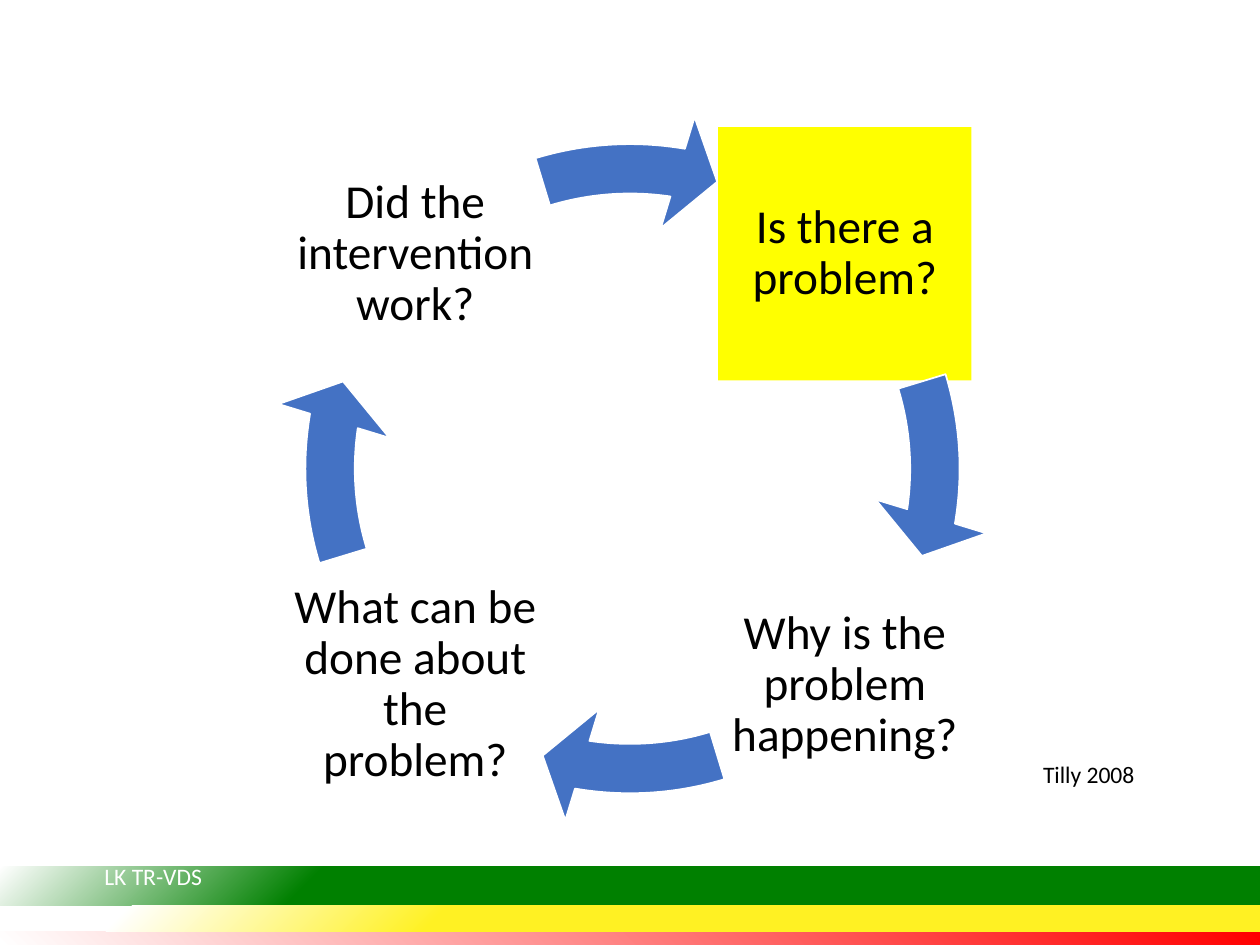
import dataclasses

import pptx
import pptx.dml.color
import pptx.enum.shapes
import pptx.enum.text
import pptx.oxml
import pptx.oxml.ns
import pptx.util


@dataclasses.dataclass(frozen=True)
class Theme:
    font: str = "Calibri"
    question_size: float = 27
    label_size: float = 13.5
    ink: str = "000000"
    white: str = "FFFFFF"
    arrow: str = "4472C4"
    highlight: str = "FFFF00"
    red: str = "FF0000"
    green: str = "008000"
    yellow: str = "FFF123"


theme = Theme()
color = pptx.dml.color.RGBColor.from_string
shape_types = pptx.enum.shapes.MSO_SHAPE
inches = pptx.util.Inches
namespace = pptx.oxml.ns.nsdecls("a")

presentation = pptx.Presentation()
presentation.slide_width = inches(10)
presentation.slide_height = inches(7.5)
slide = presentation.slides.add_slide(presentation.slide_layouts[6])


def add_text(left, top, width, height, text, size, ink):
    box = slide.shapes.add_textbox(inches(left), inches(top), inches(width), inches(height))
    box.text_frame.word_wrap = True
    paragraph = box.text_frame.paragraphs[0]
    paragraph.text = text
    paragraph.font.name = theme.font
    paragraph.font.size = pptx.util.Pt(size)
    paragraph.font.color.rgb = color(ink)
    return box


bands = [
    (7.39, 0.12, theme.red, 0, 100, 'l="100000" b="100000"'),
    (6.88, 0.31, theme.green, 75, 100, 'l="100000" t="100000"'),
    (7.19, 0.2, theme.yellow, 65, 90, 'l="100000" t="100000"'),
]
for top, height, band_color, start, end, focus in bands:
    band = slide.shapes.add_shape(
        shape_types.RECTANGLE, 0, inches(top), presentation.slide_width, inches(height))
    band.shadow.inherit = False
    band.line.fill.background()
    band.fill.background()
    properties = band.fill._xPr
    gradient = pptx.oxml.parse_xml(
        f'<a:gradFill {namespace} rotWithShape="1"><a:gsLst>'
        f'<a:gs pos="{start * 1000}"><a:srgbClr val="{band_color}"/></a:gs>'
        f'<a:gs pos="{end * 1000}"><a:srgbClr val="{theme.white}"/></a:gs></a:gsLst>'
        f'<a:path path="circle"><a:fillToRect {focus}/></a:path></a:gradFill>')
    properties.replace(properties.find(pptx.oxml.ns.qn("a:noFill")), gradient)

labels = [
    (0.73, 6.79, 1.92, "LK TR-VDS", theme.white),
    (8.18, 5.98, 1.07, "Tilly 2008", theme.ink),
]
for left, top, width, text, ink in labels:
    label = add_text(left, top, width, 0.33, text, theme.label_size, ink)
    label.text_frame.auto_size = pptx.enum.text.MSO_AUTO_SIZE.SHAPE_TO_FIT_TEXT

cell = 2.01
columns = (2.29, 5.7)
rows = (1.01, 4.43)
ring_size = 5.68
quarter_turn = 54
full_turn = 4 * quarter_turn
questions = [
    (1, 0, "Is there a problem?"),
    (1, 1, "Why is the problem happening?"),
    (0, 1, "What can be done about the problem?"),
    (0, 0, "Did the intervention work?"),
]
for step, (column, row, text) in enumerate(questions):
    question = add_text(columns[column], rows[row], cell, cell, text, theme.question_size, theme.ink)
    frame = question.text_frame
    frame.margin_left = frame.margin_right = inches(0.04)
    frame.margin_top = frame.margin_bottom = inches(0.04)
    frame.vertical_anchor = pptx.enum.text.MSO_ANCHOR.MIDDLE
    frame.paragraphs[0].alignment = pptx.enum.text.PP_ALIGN.CENTER
    frame.paragraphs[0].line_spacing = 0.9
    if step == 0:
        question.fill.solid()
        question.fill.fore_color.rgb = color(theme.highlight)

    ring_left = 2.2 if step == 0 else 2.16
    arrow = slide.shapes.add_shape(
        shape_types.CIRCULAR_ARROW, inches(ring_left), inches(0.88), inches(ring_size), inches(ring_size))
    arrow.shadow.inherit = False
    turn = step * quarter_turn
    for index, value in enumerate((0.069, 4.653, 5.497 + turn, (205.85 + turn) % full_turn, 0.081)):
        arrow.adjustments[index] = value
    arrow.fill.solid()
    arrow.fill.fore_color.rgb = color(theme.arrow)
    arrow.line.color.rgb = color(theme.white)
    arrow.line.width = pptx.util.Pt(1)

presentation.save("out.pptx")
